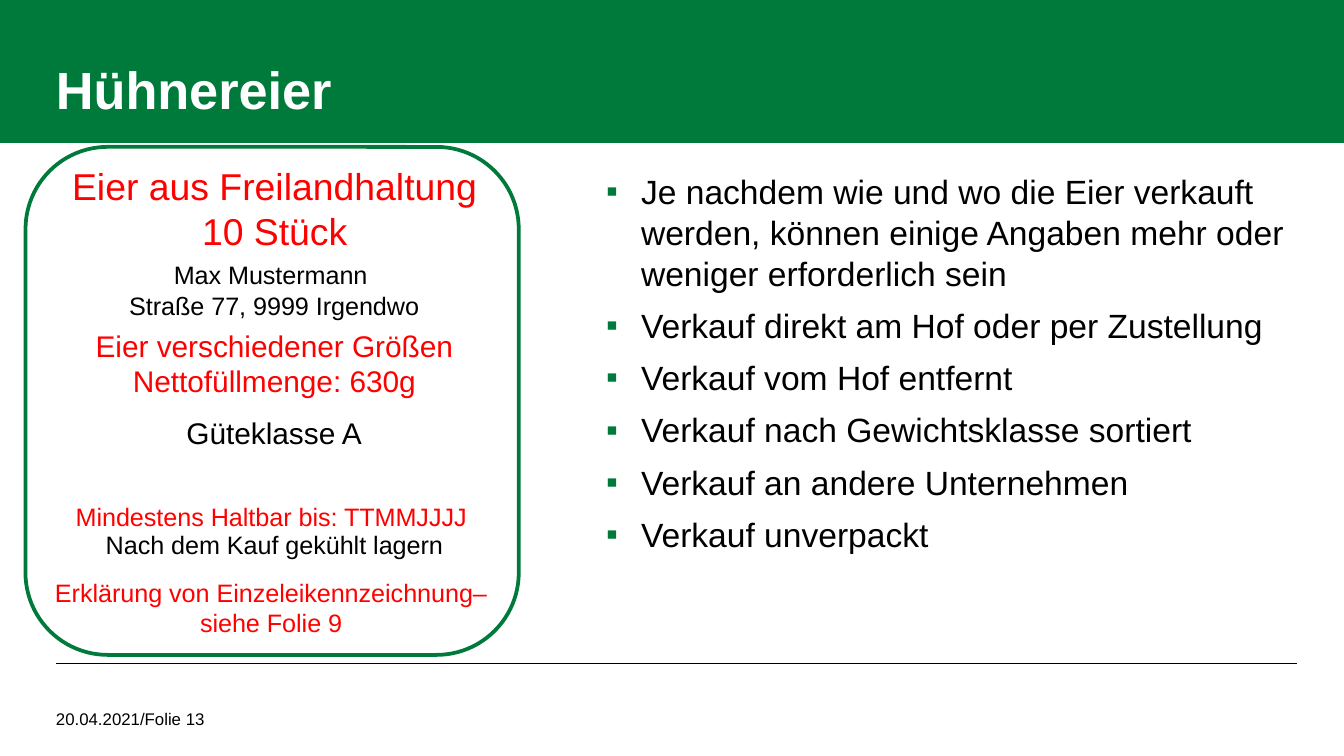
from collections import namedtuple

from lxml.etree import SubElement
from pptx import Presentation
from pptx.dml.color import RGBColor
from pptx.enum.shapes import MSO_CONNECTOR, MSO_SHAPE
from pptx.enum.text import MSO_ANCHOR, MSO_AUTO_SIZE, PP_ALIGN
from pptx.oxml.ns import qn
from pptx.util import Inches, Pt

GREEN = RGBColor(0x00, 0x7A, 0x3B)
RED = RGBColor(0xFF, 0x00, 0x00)
BLACK = RGBColor(0x00, 0x00, 0x00)
WHITE = RGBColor(0xFF, 0xFF, 0xFF)

COLUMNS, ROWS = 100, 56.25
CELL = Inches(0.1)
MARGIN = 4.17

Box = namedtuple("Box", "left top width height")
LabelLine = namedtuple("LabelLine", "box size color texts wrap format")

CENTERED = {"alignment": PP_ALIGN.CENTER}
LABEL_LINES = [
    LabelLine(Box(1.4, 0.75, 34.3, 7.7), 20, RED,
              ["Eier aus Freilandhaltung", "10 Stück"], True, CENTERED),
    LabelLine(Box(3.4, 7.9, 30.2, 5.6), 13.5, BLACK,
              ["Max Mustermann ", "Straße 77, 9999 Irgendwo"], True, CENTERED),
    LabelLine(Box(4.07, 12.93, 28.9, 9.1), 16, RED,
              ["Eier verschiedener Größen", "Nettofüllmenge: 630g"], False, CENTERED),
    LabelLine(Box(10.9, 19.45, 15.2, 3.7), 16, BLACK, ["Güteklasse A"], False, CENTERED),
    LabelLine(Box(2.75, 23.4, 31.5, 5), 13.5, RED,
              ["Mindestens Haltbar bis: TTMMJJJJ"], False, {"line_spacing": Pt(34)}),
    LabelLine(Box(4.77, 28, 27.5, 3.3), 13.5, BLACK,
              ["Nach dem Kauf gekühlt lagern"], False, CENTERED),
    LabelLine(Box(0.93, 31.55, 35.2, 5.6), 13.5, RED,
              ["Erklärung von Einzeleikennzeichnung– ", "siehe Folie 9 "], False, CENTERED),
]
SALES_POINTS = [
    "Je nachdem wie und wo die Eier verkauft werden, können einige Angaben mehr oder weniger erforderlich sein",
    "Verkauf direkt am Hof oder per Zustellung",
    "Verkauf vom Hof entfernt",
    "Verkauf nach Gewichtsklasse sortiert",
    "Verkauf an andere Unternehmen",
    "Verkauf unverpackt",
]


def cells(*counts):
    return [round(count * CELL) for count in counts]


def apply(target, values):
    for name, value in values.items():
        setattr(target, name, value)


def set_margins(frame, left=0, top=0, right=0, bottom=0):
    sides = ("margin_left", "margin_top", "margin_right", "margin_bottom")
    apply(frame, dict(zip(sides, cells(left, top, right, bottom))))


def write(frame, texts, size, color, layout, bold=False, bulleted=False):
    for index, text in enumerate(texts):
        paragraph = frame.paragraphs[0] if index == 0 else frame.add_paragraph()
        apply(paragraph, layout)
        if bulleted:
            add_bullet(paragraph)
        run = paragraph.add_run()
        run.text = text
        apply(run.font, {"name": "Arial", "size": Pt(size), "bold": bold})
        run.font.color.rgb = color


def add_bullet(paragraph):
    properties = paragraph._p.get_or_add_pPr()
    indent, hanging = cells(3.2, -2.6)
    properties.set("marL", str(indent))
    properties.set("indent", str(hanging))
    bullet_color = SubElement(properties, qn("a:buClr"))
    SubElement(bullet_color, qn("a:srgbClr"), val=str(GREEN))
    SubElement(properties, qn("a:buFont"), typeface="Arial")
    SubElement(properties, qn("a:buChar"), char="▪")


def add_panel(slide, preset, box, fill):
    panel = slide.shapes.add_shape(preset, *cells(*box))
    panel.shadow.inherit = False
    panel.fill.solid()
    panel.fill.fore_color.rgb = fill
    return panel


def add_header(slide, box):
    header = add_panel(slide, MSO_SHAPE.RECTANGLE, box, GREEN)
    header.line.fill.background()
    frame = header.text_frame
    apply(frame, {"word_wrap": True, "vertical_anchor": MSO_ANCHOR.BOTTOM})
    set_margins(frame, MARGIN, 2, MARGIN, 1.6)
    write(frame, ["Hühnereier"], 28, WHITE,
          {"alignment": PP_ALIGN.LEFT, "line_spacing": 0.95}, bold=True)


def add_sales_points(slide, box):
    frame = slide.shapes.add_textbox(*cells(*box)).text_frame
    frame.word_wrap = True
    set_margins(frame)
    write(frame, SALES_POINTS, 18, BLACK,
          {"line_spacing": Pt(22), "space_after": Pt(6)}, bulleted=True)


def add_egg_label(slide, box):
    outline = add_panel(slide, MSO_SHAPE.ROUNDED_RECTANGLE, box, WHITE)
    outline.line.color.rgb = GREEN
    outline.line.width = Pt(2)
    for line in LABEL_LINES:
        place = line.box._replace(left=box.left + line.box.left, top=box.top + line.box.top)
        frame = slide.shapes.add_textbox(*cells(*place)).text_frame
        apply(frame, {"word_wrap": line.wrap, "auto_size": MSO_AUTO_SIZE.SHAPE_TO_FIT_TEXT})
        write(frame, line.texts, line.size, line.color, line.format)


def add_footer(slide, box):
    rule = slide.shapes.add_connector(
        MSO_CONNECTOR.STRAIGHT,
        *cells(box.left, box.top, box.left + box.width, box.top))
    rule.line.color.rgb = BLACK
    rule.line.width = Pt(0.5)
    SubElement(rule._element.spPr, qn("a:effectLst"))
    date_place = cells(box.left, box.top + 2.1, 53.6, box.height - 2.1)
    frame = slide.shapes.add_textbox(*date_place).text_frame
    apply(frame, {"word_wrap": True, "vertical_anchor": MSO_ANCHOR.MIDDLE})
    set_margins(frame)
    write(frame, ["20.04.2021/Folie 13"], 9, BLACK, {"line_spacing": Pt(12)})


def main():
    presentation = Presentation()
    width, height = cells(COLUMNS, ROWS)
    apply(presentation, {"slide_width": width, "slide_height": height})
    slide = presentation.slides.add_slide(presentation.slide_layouts[6])
    add_footer(slide, Box(MARGIN, 49.38, 92.3, 5.9))
    add_header(slide, Box(0, 0, COLUMNS, 10.63))
    add_sales_points(slide, Box(44.5, 12.63, 51.3, 34.4))
    add_egg_label(slide, Box(1.9, 10.93, 36.7, 37.8))
    presentation.save("out.pptx")


if __name__ == "__main__":
    main()
